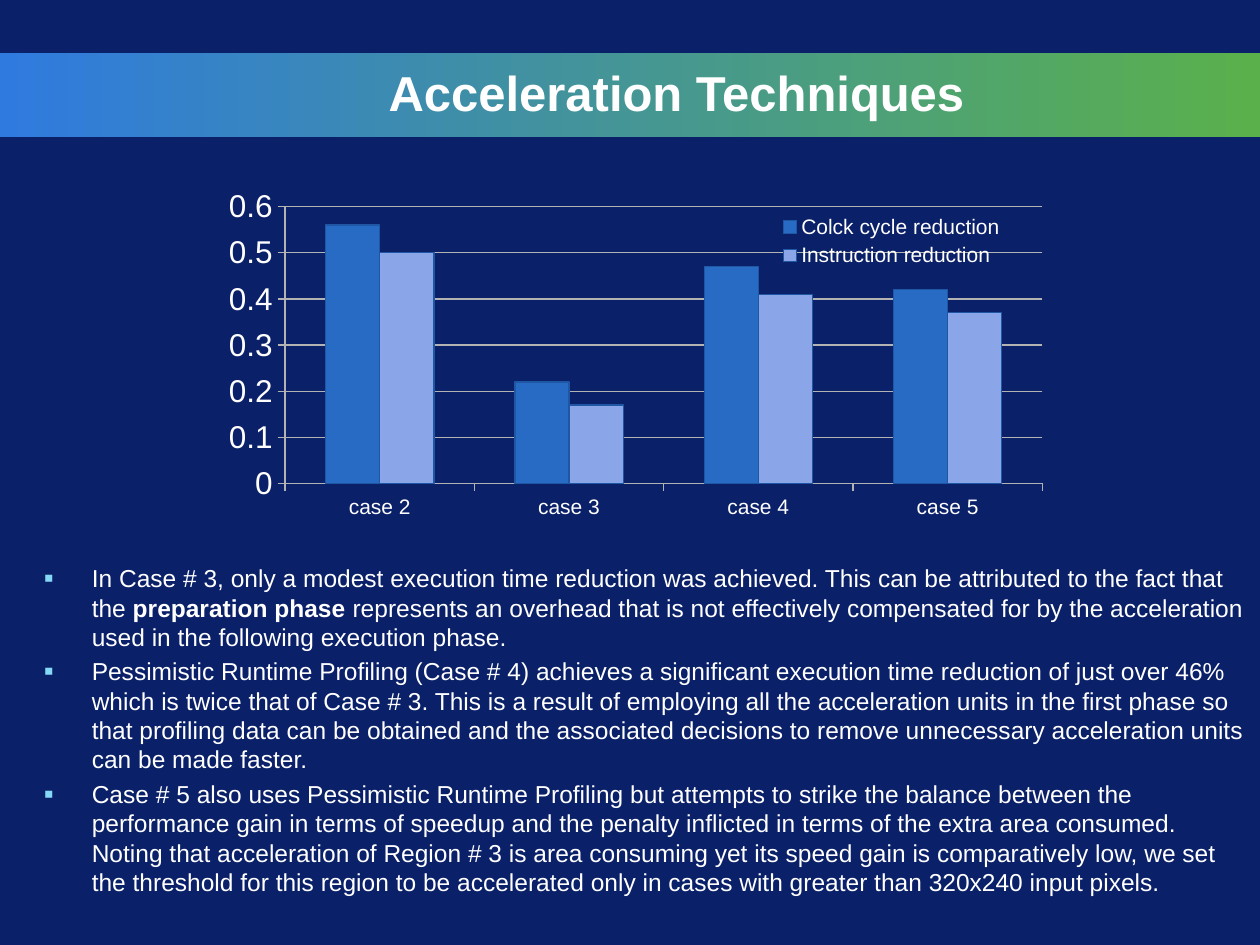
"""Build the Acceleration Techniques slide with its bar chart and notes."""
from lxml import etree
from pptx import Presentation
from pptx.chart.data import CategoryChartData
from pptx.dml.color import RGBColor
from pptx.enum import chart as ch, shapes, text
from pptx.oxml import ns
from pptx.util import Inches, Pt

NAVY = RGBColor(0x0A, 0x20, 0x68)
BLUE = RGBColor(0x2F, 0x7A, 0xDF)
GREEN = RGBColor(0x5A, 0xB1, 0x4B)
WHITE = RGBColor(0xFF, 0xFF, 0xFF)
GREY = RGBColor(0xB3, 0xB3, 0xB3)
EDGE = RGBColor(0x1F, 0x57, 0xA4)
DEEP = RGBColor(0x28, 0x6B, 0xC5)
PALE = RGBColor(0x8A, 0xA5, 0xE8)
FACE = "Arial"

TITLE = "Acceleration Techniques"
CASES = ["case 2", "case 3", "case 4", "case 5"]
SERIES = [
    ("Colck cycle reduction", (0.56, 0.22, 0.47, 0.42), DEEP),
    ("Instruction reduction", (0.5, 0.17, 0.41, 0.37), PALE),
]
NOTES = [
    [("In Case # 3, only a modest execution time reduction was achieved. This can be "
      "attributed to the fact that the ", False),
     ("preparation phase", True),
     (" represents an overhead that is not effectively compensated for by the "
      "acceleration used in the following execution phase.", False)],
    [("Pessimistic Runtime Profiling (Case # 4) achieves a significant execution time "
      "reduction of just over 46% which is twice that of Case # 3. This is a result of "
      "employing all the acceleration units in the first phase so that profiling data "
      "can be obtained and the associated decisions to remove unnecessary acceleration "
      "units can be made faster.", False)],
    [("Case # 5 also uses Pessimistic Runtime Profiling but attempts to strike the "
      "balance between the performance gain in terms of speedup and the penalty "
      "inflicted in terms of the extra area consumed. Noting that acceleration of "
      "Region # 3 is area consuming yet its speed gain is comparatively low, we set the "
      "threshold for this region to be accelerated only in cases with greater than "
      "320x240 input pixels.", False)],
]


def style(font, size, bold=False):
    font.name, font.size, font.bold = FACE, Pt(size), bold
    font.color.rgb = WHITE


def add_box(slide, *place):
    frame = slide.shapes.add_textbox(*map(Inches, place)).text_frame
    frame.word_wrap = True
    return frame


def add_bullet(para):
    props = para._p.get_or_add_pPr()
    props.set("marL", str(Inches(0.38)))
    props.set("indent", str(-Inches(0.38)))
    color = etree.SubElement(props, ns.qn("a:buClr"))
    etree.SubElement(color, ns.qn("a:srgbClr"), val="85D9F7")
    etree.SubElement(props, ns.qn("a:buSzPct"), val="115000")
    etree.SubElement(props, ns.qn("a:buFont"), typeface=FACE)
    etree.SubElement(props, ns.qn("a:buChar"), char="▪")


def set_layout(parent, index, place, inner=False):
    for old in parent.findall(ns.qn("c:layout")):
        parent.remove(old)
    layout = etree.Element(ns.qn("c:layout"))
    manual = etree.SubElement(layout, ns.qn("c:manualLayout"))
    pairs = [("layoutTarget", "inner")] if inner else []
    pairs += [("xMode", "edge"), ("yMode", "edge"), *zip("xywh", place)]
    for tag, val in pairs:
        etree.SubElement(manual, ns.qn(f"c:{tag}"), val=str(val))
    parent.insert(index, layout)


def add_chart(slide):
    data = CategoryChartData()
    data.categories = CASES
    for name, vals, _ in SERIES:
        data.add_series(name, vals)
    place = map(Inches, (1.58, 1.5, 6.83, 2.75))
    chart = slide.shapes.add_chart(ch.XL_CHART_TYPE.COLUMN_CLUSTERED, *place, data).chart
    style(chart.font, 18)
    chart.has_title = False
    plot = chart.plots[0]
    plot.gap_width, plot.overlap, plot.vary_by_categories = 150, 0, False
    for bars, (_, _, color) in zip(plot.series, SERIES):
        bars.format.fill.solid()
        bars.format.fill.fore_color.rgb = color
        bars.format.line.color.rgb = EDGE
        bars.format.line.width = Pt(0.75)

    cats, vals = chart.category_axis, chart.value_axis
    for axis in (cats, vals):
        axis.major_tick_mark = ch.XL_TICK_MARK.OUTSIDE
        axis.format.line.color.rgb = GREY
    style(cats.tick_labels.font, 12)
    vals.minimum_scale, vals.maximum_scale, vals.major_unit = 0, 0.6, 0.1
    vals.tick_labels.number_format = "General"
    vals.tick_labels.number_format_is_linked = False
    vals.has_major_gridlines = True
    vals.major_gridlines.format.line.color.rgb = GREY

    chart.has_legend = True
    legend = chart.legend
    legend.position = ch.XL_LEGEND_POSITION.RIGHT
    legend.include_in_layout = False
    style(legend.font, 12)
    set_layout(legend._element, 1, (0.67, 0.06, 0.27, 0.18))
    area = chart._chartSpace.find(".//" + ns.qn("c:plotArea"))
    set_layout(area, 0, (0.1, 0.05, 0.88, 0.8), inner=True)


def main():
    deck = Presentation()
    deck.slide_width, deck.slide_height = Inches(10), Inches(7.5)
    slide = deck.slides.add_slide(deck.slide_layouts[6])
    slide.background.fill.solid()
    slide.background.fill.fore_color.rgb = NAVY

    band = slide.shapes.add_shape(
        shapes.MSO_SHAPE.RECTANGLE, *map(Inches, (0, 0.42, 10, 0.67)))
    band.shadow.inherit = False
    band.line.fill.background()
    band.fill.gradient()
    band.fill.gradient_angle = 0
    for stop, color, spot in zip(band.fill.gradient_stops, (BLUE, GREEN), (0, 1)):
        stop.color.rgb, stop.position = color, spot

    title = add_box(slide, 0.5, 0.42, 7.25, 0.62)
    title.vertical_anchor = text.MSO_ANCHOR.MIDDLE
    title.text = TITLE
    head = title.paragraphs[0]
    head.alignment = text.PP_ALIGN.RIGHT
    style(head.runs[0].font, 28, True)

    add_chart(slide)

    body = add_box(slide, 0.25, 4.42, 9.75, 2.8)
    for i, note in enumerate(NOTES):
        para = body.add_paragraph() if i else body.paragraphs[0]
        add_bullet(para)
        para.space_before = Pt(2.8 if i else 0)
        for words, bold in note:
            run = para.add_run()
            run.text = words
            style(run.font, 14, bold)

    deck.save("out.pptx")


if __name__ == "__main__":
    main()
